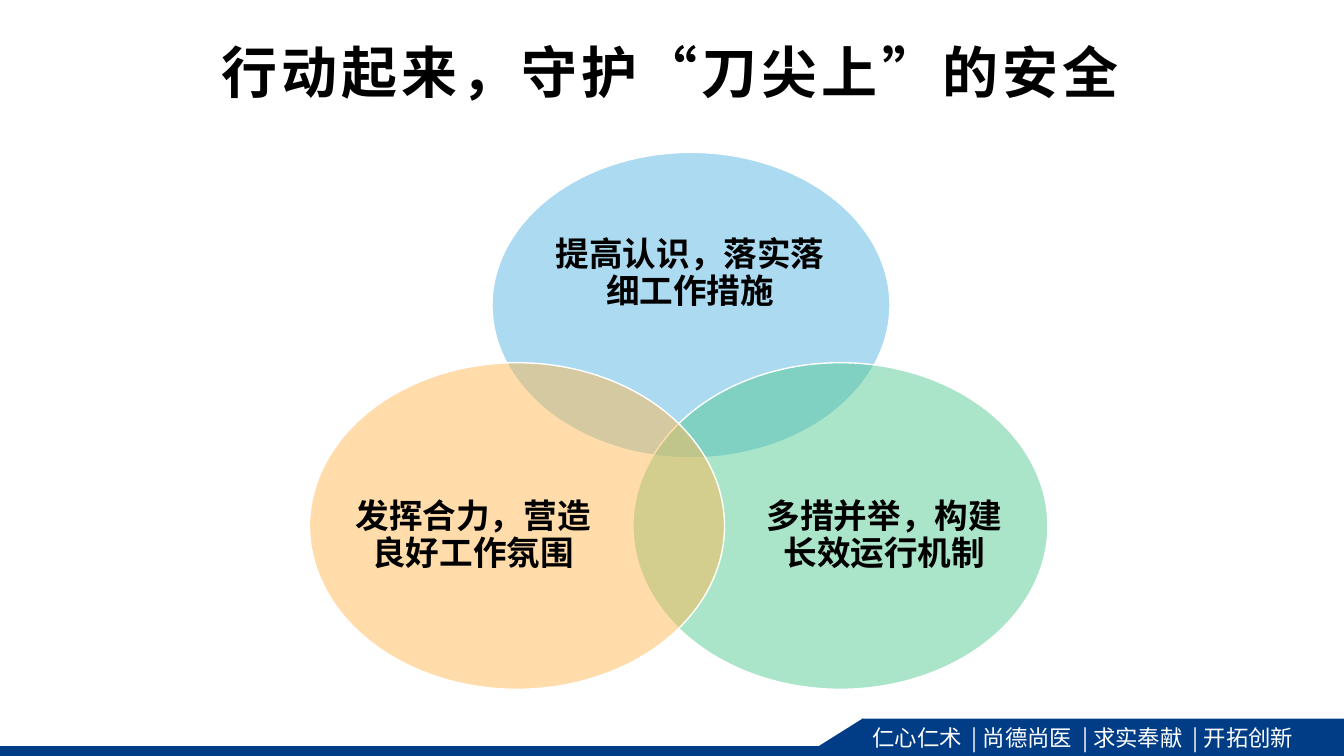
from lxml.etree import SubElement
from pptx import Presentation
from pptx.dml.color import RGBColor as RGB
from pptx.enum.shapes import MSO_SHAPE as SHAPE
from pptx.enum.text import MSO_ANCHOR as ANCHOR, PP_ALIGN as ALIGN
from pptx.oxml.ns import qn
from pptx.util import Cm, Pt

COLORS = {
    "navy": "003D86",
    "blue": "58B6E5",
    "green": "56CA95",
    "orange": "FFBA55",
    "white": "FFFFFF",
    "black": "000000",
}


class SlideBuilder:
    """Draws styled elements on one slide, with lengths in centimetres."""

    latin, asian = "Arial", "Noto Sans CJK JP"

    def __init__(self, slide):
        self.s = slide

    def shape(self, kind, box, color, line=None, alpha=None, rotation=0):
        sp = self.s.shapes.add_shape(kind, *map(Cm, box))
        sp.shadow.inherit = False
        sp.rotation = rotation
        sp.fill.solid()
        sp.fill.fore_color.rgb = RGB.from_string(COLORS[color])
        if alpha:
            clr = sp._element.spPr.find(qn("a:solidFill"))[0]
            SubElement(clr, qn("a:alpha"), val=str(alpha * 1000))
        if line:
            sp.line.color.rgb = RGB.from_string(COLORS[line])
            sp.line.width = Pt(1)
        else:
            sp.line.fill.background()
        return sp

    def label(self, sp, text, size, color="black", bold=False, font=None,
              align=ALIGN.CENTER, spacing=None, tracking=0):
        tf = sp.text_frame
        tf.word_wrap = True
        tf.vertical_anchor = ANCHOR.MIDDLE
        p = tf.paragraphs[0]
        p.alignment = align
        p.line_spacing = spacing
        r = p.add_run()
        r.text = text
        r.font.size = Pt(size)
        r.font.bold = bold
        r.font.color.rgb = RGB.from_string(COLORS[color])
        r.font.name = font or self.latin
        rpr = r._r.get_or_add_rPr()
        rpr.set("lang", "zh-CN")
        if tracking:
            rpr.set("spc", str(tracking * 100))
        SubElement(rpr, qn("a:ea"), typeface=self.asian)

    def text(self, box, text, size, margin=None, **style):
        sp = self.s.shapes.add_textbox(*map(Cm, box))
        if margin is not None:
            tf = sp.text_frame
            tf.margin_left = tf.margin_right = Cm(margin)
            tf.margin_top = tf.margin_bottom = Cm(margin)
        self.label(sp, text, size, **style)

    def footer(self, text):
        self.shape(SHAPE.RECTANGLE, (0, 18.8, 25.5, 0.25), "navy")
        self.shape(SHAPE.RIGHT_TRIANGLE, (20.57, 17.83, 0.91, 1.45), "navy",
                   rotation=270)
        sp = self.shape(SHAPE.RECTANGLE, (21.74, 18.11, 12.13, 0.94), "navy")
        self.label(sp, text, 16, color="white", font=self.asian,
                   align=ALIGN.LEFT)

    def venn_circle(self, box, color, label_box, label):
        self.shape(SHAPE.OVAL, box, color, line="white", alpha=50)
        self.text(label_box, label, 24, margin=0, bold=True, spacing=0.9)


def main():
    prs = Presentation()
    prs.slide_width, prs.slide_height = Cm(33.87), Cm(19.05)
    s = SlideBuilder(prs.slides.add_slide(prs.slide_layouts[6]))
    s.footer("仁心仁术  | 尚德尚医  | 求实奉献  | 开拓创新")
    s.text((1.65, 0.82, 30.48, 1.96), "行动起来，守护“刀尖上”的安全", 40,
           bold=True, tracking=3)
    circles = [
        ((12.4, 3.84, 10.03, 7.7), "blue",
         (13.72, 5.18, 7.34, 3.45), "提高认识，落实落细工作措施"),
        ((15.95, 9.14, 10.46, 8.23), "green",
         (19.15, 11.25, 6.27, 4.52), "多措并举，构建长效运行机制"),
        ((7.8, 9.14, 10.46, 8.23), "orange",
         (8.79, 11.25, 6.27, 4.52), "发挥合力，营造良好工作氛围"),
    ]
    for circle in circles:
        s.venn_circle(*circle)
    prs.save("out.pptx")


if __name__ == "__main__":
    main()
